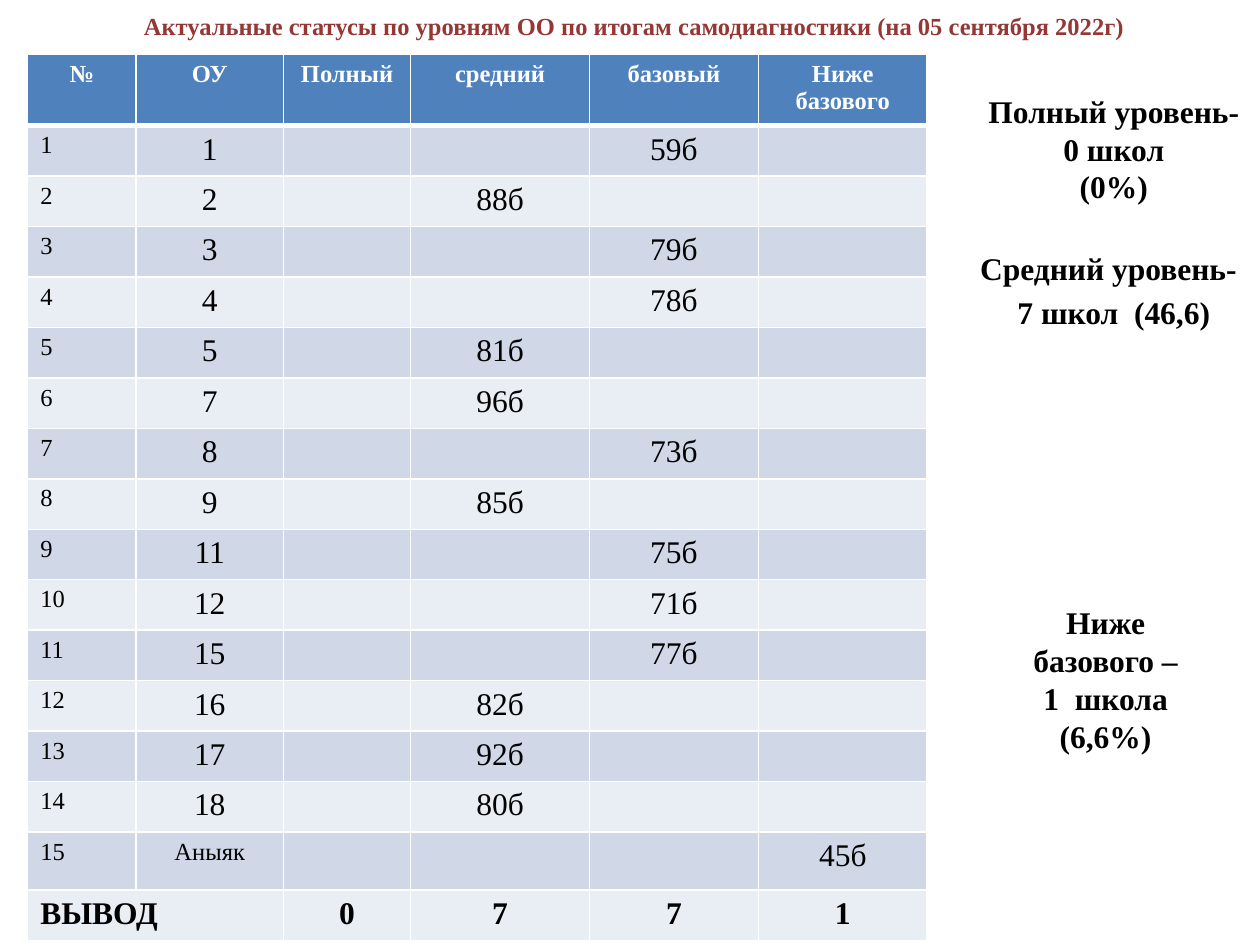
from lxml.etree import SubElement
from pptx import Presentation
from pptx.dml.color import RGBColor as RGB
from pptx.enum.text import MSO_ANCHOR as Anchor, MSO_AUTO_SIZE as Fit, PP_ALIGN as Align
from pptx.oxml.ns import qn
from pptx.util import Inches, Pt

# Content
TITLE = "Актуальные статусы по уровням ОО по итогам самодиагностики (на 05 сентября 2022г)"
HEADS = ["№", "ОУ", "Полный", "средний", "базовый", "Ниже базового"]
MID, BASE, LOW = 3, 4, 5  # columns of the levels
SCORES = [
    ("1", BASE, "59б"), ("2", MID, "88б"), ("3", BASE, "79б"),
    ("4", BASE, "78б"), ("5", MID, "81б"), ("7", MID, "96б"),
    ("8", BASE, "73б"), ("9", MID, "85б"), ("11", BASE, "75б"),
    ("12", BASE, "71б"), ("15", BASE, "77б"), ("16", MID, "82б"),
    ("17", MID, "92б"), ("18", MID, "80б"), ("Аныяк", LOW, "45б"),
]
TOTALS = ["ВЫВОД", "", "0", "7", "7", "1"]

# Notes: place, then lines as text, alignment, space before
NOTES = [
    ((7.68, 0.68, 2.32, 2.2), [
        ("Полный уровень-", Align.CENTER, 0),
        ("0 школ", Align.CENTER, 0),
        ("(0%)", Align.CENTER, 0),
        ("Средний уровень-", Align.LEFT, 25),
        ("7 школ  (46,6)", Align.CENTER, 3.6),
    ]),
    ((7.91, 4.74, 1.73, 1.31), [
        ("Ниже базового –", Align.CENTER, 0),
        ("1  школа (6,6%)", Align.CENTER, 0),
    ]),
]

THEME = {
    "font": "Times New Roman", "small": 14, "large": 18,
    "title": "953735", "text": "000000", "white": "FFFFFF",
    "head": "4F81BD", "bands": ["E9EDF4", "D0D8E8"],
}
COLS = [0.86, 1.17, 1.01, 1.42, 1.34, 1.34]
ROWS = [0.55] + [0.4] * 14 + [0.46, 0.4]


def style(para, size, color, bold=False, align=Align.CENTER):
    para.alignment = align
    font = para.font
    font.name, font.size, font.bold = THEME["font"], Pt(THEME[size]), bold
    font.color.rgb = RGB.from_string(THEME[color])


def border(cell, heavy):
    props = cell._tc.get_or_add_tcPr()
    for spot, side in enumerate(("lnL", "lnR", "lnT", "lnB")):
        width = Pt(3 if side == heavy else 1)
        line = props.makeelement(qn(f"a:{side}"), {"w": str(width)})
        fill = SubElement(line, qn("a:solidFill"))
        SubElement(fill, qn("a:srgbClr"), val=THEME["white"])
        props.insert(spot, line)


def add_grid(slide):
    rows = [HEADS]
    for num, (school, level, score) in enumerate(SCORES, 1):
        row = [str(num), school, "", "", "", ""]
        row[level] = score
        rows.append(row)
    rows.append(TOTALS)
    last = len(rows) - 1

    frame = slide.shapes.add_table(
        len(rows), len(COLS), Inches(0.22), Inches(0.43),
        Inches(sum(COLS)), Inches(sum(ROWS)))
    table = frame.table
    for col, width in zip(table.columns, COLS):
        col.width = Inches(width)
    for r, row in enumerate(rows):
        table.rows[r].height = Inches(ROWS[r])
        for c, text in enumerate(row):
            cell = table.cell(r, c)
            cell.text = text
            cell.fill.solid()
            shade = THEME["bands"][r % 2] if r else THEME["head"]
            cell.fill.fore_color.rgb = RGB.from_string(shade)
            border(cell, {0: "lnB", 1: "lnT"}.get(r))
            small = r == 0 or (c == 0 and r < last) or text == "Аныяк"
            style(cell.text_frame.paragraphs[0],
                  "small" if small else "large",
                  "text" if r else "white", r in (0, last),
                  Align.LEFT if r and c == 0 else Align.CENTER)
    table.cell(last, 0).merge(table.cell(last, 1))


def add_note(slide, place, lines):
    frame = slide.shapes.add_textbox(*map(Inches, place)).text_frame
    frame.word_wrap = True
    for i, (text, align, gap) in enumerate(lines):
        para = frame.add_paragraph() if i else frame.paragraphs[0]
        para.text = text
        if gap:
            para.space_before = Pt(gap)
        style(para, "large", "text", True, align)


def main():
    deck = Presentation()
    deck.slide_width, deck.slide_height = Inches(10), Inches(7.5)
    slide = deck.slides.add_slide(deck.slide_layouts[5])

    # Title
    title = slide.shapes.title
    title.left, title.top, title.width, title.height = map(
        Inches, (0.5, 0.13, 9.07, 0.24))
    frame = title.text_frame
    frame.text = TITLE
    frame.auto_size, frame.vertical_anchor = Fit.NONE, Anchor.BOTTOM
    style(frame.paragraphs[0], "small", "title", True)

    # Side notes and table
    for place, lines in NOTES:
        add_note(slide, place, lines)
    add_grid(slide)
    deck.save("out.pptx")


if __name__ == "__main__":
    main()
